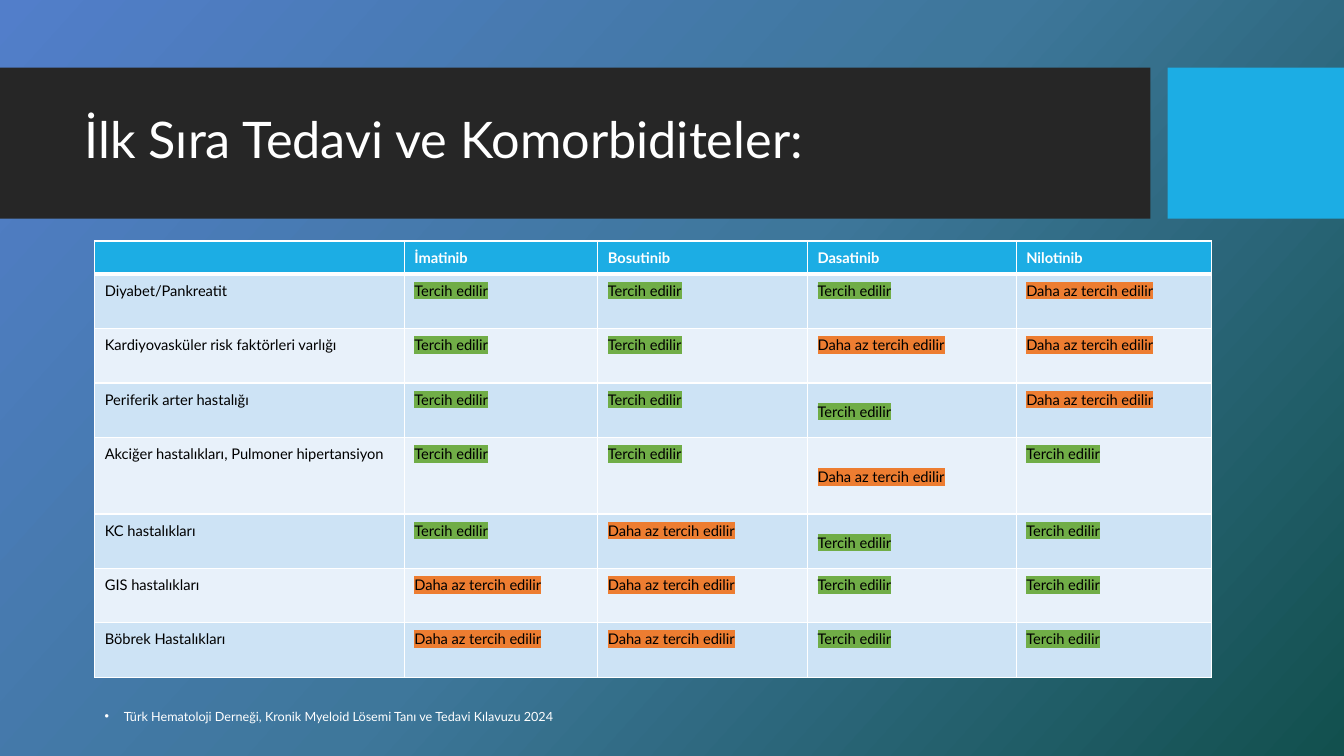
from copy import deepcopy

from lxml.etree import SubElement
from pptx import Presentation
from pptx.dml.color import RGBColor
from pptx.enum.shapes import MSO_SHAPE as Shape
from pptx.enum.text import MSO_ANCHOR as Anchor, MSO_AUTO_SIZE as Auto, PP_ALIGN as Align
from pptx.oxml.ns import qn
from pptx.util import Inches, Pt

TITLE = "İlk Sıra Tedavi ve Komorbiditeler:"
NOTE = "Türk Hematoloji Derneği, Kronik Myeloid Lösemi Tanı ve Tedavi Kılavuzu 2024"
HEAD = ["", "İmatinib", "Bosutinib", "Dasatinib", "Nilotinib"]
# One letter per drug: + preferred, - less preferred
ROWS = [
    ("Diyabet/Pankreatit", "+++-"),
    ("Kardiyovasküler risk faktörleri varlığı", "++--"),
    ("Periferik arter hastalığı", "+++-"),
    ("Akciğer hastalıkları, Pulmoner hipertansiyon", "++-+"),
    ("KC hastalıkları", "+-++"),
    ("GIS hastalıkları", "--++"),
    ("Böbrek Hastalıkları", "--++"),
]
MARKS = {"+": ("Tercih edilir", "good"), "-": ("Daha az tercih edilir", "poor")}
COLORS = {
    "white": "FFFFFF", "black": "000000", "bar": "262626", "accent": "1CADE4",
    "odd": "CDE3F5", "even": "E8F1FA", "good": "70AD47", "poor": "ED7D31",
}
SKY = [(0, "527ECA"), (0.5, "3E779B"), (1, "12504E")]
FONT = "Lato"
WIDE, HIGH = 13.33, 7.5
COLS = [3.07, 1.92, 2.08, 2.07, 1.94]
HEAD_H, ROW_H, TALL_H = 0.33, 0.54, 0.76
TALL = 4
LEFT_ROWS = {2, 3, 4}
MID_CELLS = {(3, 3), (4, 3), (5, 3)}
EDGE = 0.94


def color(name):
    return RGBColor.from_string(COLORS[name])


def style(para, size, tint, bold=None):
    font = para.font
    font.name, font.size, font.bold = FONT, Pt(size), bold
    font.color.rgb = color(tint)


def paint(slide):
    """Fill the background with the three-stop gradient."""
    fill = slide.background.fill
    fill.gradient()
    fill.gradient_angle = 360 - 42
    stops = slide.element.find(".//" + qn("a:gsLst"))
    stops.append(deepcopy(stops[-1]))
    for stop, (pos, tint) in zip(fill.gradient_stops, SKY):
        stop.position = pos
        stop.color.rgb = RGBColor.from_string(tint)


def add_solid(parent, tint):
    SubElement(SubElement(parent, qn("a:solidFill")), qn("a:srgbClr"), val=COLORS[tint])


def add_bar(slide, left, width, tint):
    """Add a band behind the title."""
    bar = slide.shapes.add_shape(
        Shape.RECTANGLE, Inches(left), Inches(0.67), Inches(width), Inches(1.5))
    bar.shadow.inherit = False
    bar.fill.solid()
    bar.fill.fore_color.rgb = color(tint)
    bar.line.fill.background()
    slide.shapes.title.element.addprevious(bar.element)


def add_title(slide):
    title = slide.shapes.title
    title.left, title.top = Inches(0.74), Inches(0.82)
    title.width, title.height = Inches(10.51), Inches(1.18)
    frame = title.text_frame
    frame.text = TITLE
    frame.word_wrap = True
    frame.auto_size = Auto.NONE
    frame.vertical_anchor = Anchor.MIDDLE
    para = frame.paragraphs[0]
    para.alignment, para.line_spacing = Align.LEFT, 0.9
    style(para, 36, "white")


def fill_cell(cell, text, back, tint, head=False, mark=None):
    props = cell._tc.get_or_add_tcPr()
    for side in "LRTB":
        width = Pt(3 if head and side == "B" else 1)
        add_solid(SubElement(props, qn("a:ln" + side), w=str(width)), "white")
    cell.fill.solid()
    cell.fill.fore_color.rgb = color(back)
    para = cell.text_frame.paragraphs[0]
    para.alignment, para.line_spacing = Align.JUSTIFY, 1.15
    style(para, 10.5, tint, head)
    if not text:
        SubElement(para._p, qn("a:endParaRPr"), sz="1050")
        return
    run = para.add_run()
    run.text = text
    if mark:
        light = SubElement(run._r.get_or_add_rPr(), qn("a:highlight"))
        SubElement(light, qn("a:srgbClr"), val=COLORS[mark])


def add_grid(slide):
    highs = [HEAD_H] + [TALL_H if i == TALL else ROW_H for i in range(1, len(ROWS) + 1)]
    grid = slide.shapes.add_table(
        len(highs), len(COLS), Inches(EDGE), Inches(2.39),
        Inches(sum(COLS)), Inches(sum(highs))).table
    for col, width in zip(grid.columns, COLS):
        col.width = Inches(width)
    for row, high in zip(grid.rows, highs):
        row.height = Inches(high)
    for j, name in enumerate(HEAD):
        fill_cell(grid.cell(0, j), name, "accent", "white", head=True)
    for i, (name, marks) in enumerate(ROWS, 1):
        back = "odd" if i % 2 else "even"
        first = grid.cell(i, 0)
        fill_cell(first, name, back, "black")
        if i in LEFT_ROWS:
            first.text_frame.paragraphs[0].alignment = Align.LEFT
        for j, key in enumerate(marks, 1):
            text, mark = MARKS[key]
            fill_cell(grid.cell(i, j), text, back, "black", mark=mark)
    for i, j in MID_CELLS:
        grid.cell(i, j).vertical_anchor = Anchor.MIDDLE


def add_note(slide):
    box = slide.shapes.add_textbox(Inches(EDGE), Inches(6.98), Inches(11.5), Inches(0.25))
    frame = box.text_frame
    frame.word_wrap = True
    frame.auto_size = Auto.SHAPE_TO_FIT_TEXT
    para = frame.paragraphs[0]
    para.text = NOTE
    props = para._p.get_or_add_pPr()
    dent = Inches(0.19)
    props.set("marL", str(dent))
    props.set("indent", str(-dent))
    SubElement(props, qn("a:buFont"), typeface="Arial")
    SubElement(props, qn("a:buChar"), char="•")
    style(para, 9, "white")


def main():
    deck = Presentation()
    deck.slide_width, deck.slide_height = Inches(WIDE), Inches(HIGH)
    slide = deck.slides.add_slide(deck.slide_layouts[5])
    paint(slide)
    add_bar(slide, 0, 11.41, "bar")
    add_bar(slide, 11.58, WIDE - 11.58, "accent")
    add_title(slide)
    add_note(slide)
    add_grid(slide)
    deck.save("out.pptx")


if __name__ == "__main__":
    main()
